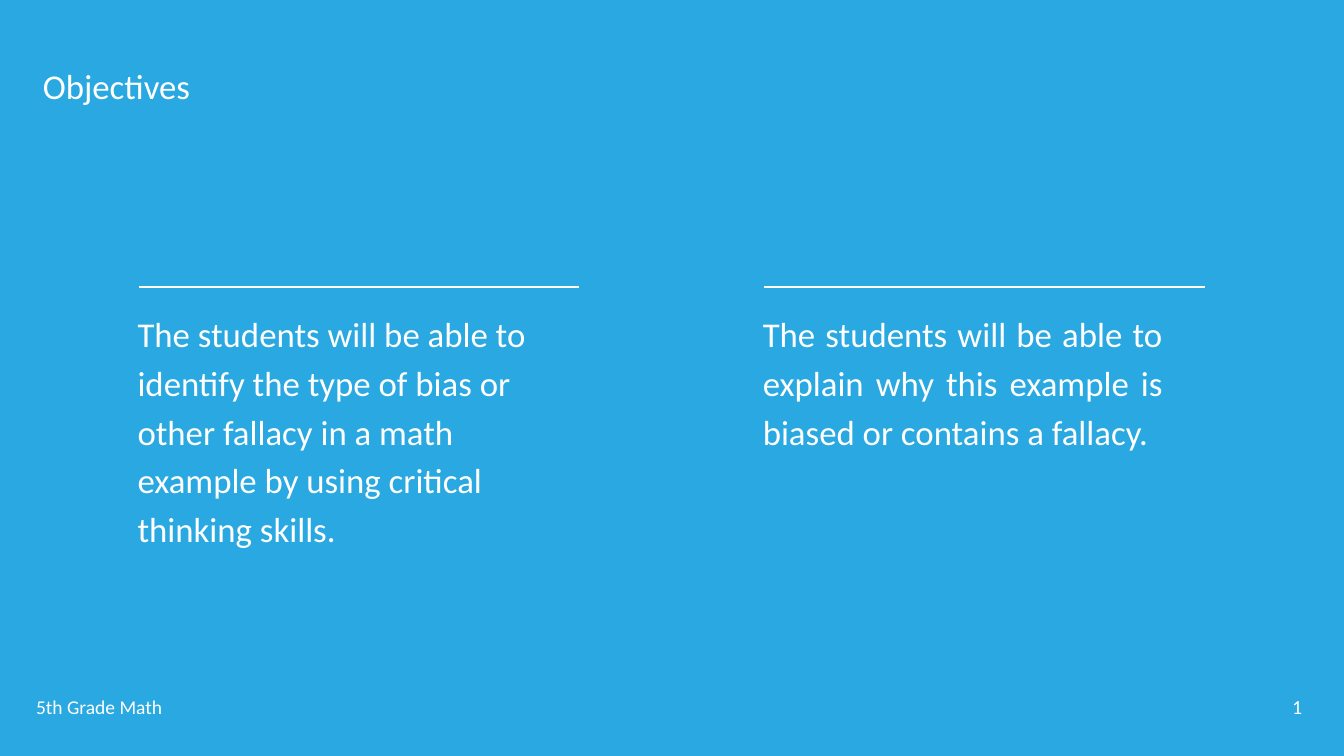
from pptx import Presentation
from pptx.dml.color import RGBColor
from pptx.enum.shapes import MSO_CONNECTOR
from pptx.enum.text import MSO_ANCHOR, MSO_AUTO_SIZE, PP_ALIGN
from pptx.oxml.ns import qn
from pptx.util import Pt
from lxml import etree

LEFT, JUSTIFY = PP_ALIGN.LEFT, PP_ALIGN.JUSTIFY
TOP = MSO_ANCHOR.TOP
GROW = MSO_AUTO_SIZE.SHAPE_TO_FIT_TEXT
STRAIGHT = MSO_CONNECTOR.STRAIGHT
PX = 9144  # 100 px to the inch
WHITE, BLUE = "FFFFFF", "29A8E1"
color = RGBColor.from_string


def write(box, text, left, top, width, height, size=41, inset=5, align=LEFT, spacing=None):
    """Place a text shape and fill it with one formatted paragraph."""
    box.left, box.top, box.width, box.height = (
        value * PX for value in (left, top, width, height))
    frame = box.text_frame
    frame.word_wrap = True
    frame.auto_size = GROW
    frame.vertical_anchor = TOP
    frame.margin_left = frame.margin_right = frame.margin_bottom = 0
    frame.margin_top = inset * PX
    para = frame.paragraphs[0]
    para.alignment = align
    para.line_spacing = spacing
    span = para.add_run()
    span.text = text
    span.font.name = "Calibri"
    span.font.size = Pt(size)
    span.font.color.rgb = color(WHITE)


deck = Presentation()
deck.slide_width, deck.slide_height = 2199 * PX, 1237 * PX
page = deck.slides.add_slide(deck.slide_layouts[5])
page.background.fill.solid()
page.background.fill.fore_color.rgb = color(BLUE)

write(page.shapes.title, "Objectives", 70, 94, 651, 81, inset=12)

objectives = [
    (225, 396, LEFT, "The students will be able to identify the type of bias or "
                     "other fallacy in a math example by using critical thinking skills."),
    (1248, 235, JUSTIFY, "The students will be able to explain why this example is "
                         "biased or contains a fallacy."),
]
for left, height, align, text in objectives:
    write(page.shapes.add_textbox(0, 0, 0, 0), text, left, 495, 655, height,
          align=align, spacing=1.17)
    rule_left = left + 2
    rule = page.shapes.add_connector(
        STRAIGHT, rule_left * PX, 470 * PX, (rule_left + 721) * PX, 470 * PX)
    rule.line.color.rgb = color(WHITE)
    rule.line.width = Pt(2.47)
    etree.SubElement(rule._element.spPr, qn("a:effectLst"))

footers = [
    ("5th Grade Math", 59, 1135, 213, 40, 23),
    ("1", 2114, 1134, 29, 41, 23.5),
]
for text, left, top, width, height, size in footers:
    write(page.shapes.add_textbox(0, 0, 0, 0), text, left, top, width, height,
          size=size, inset=2)

deck.save("out.pptx")
